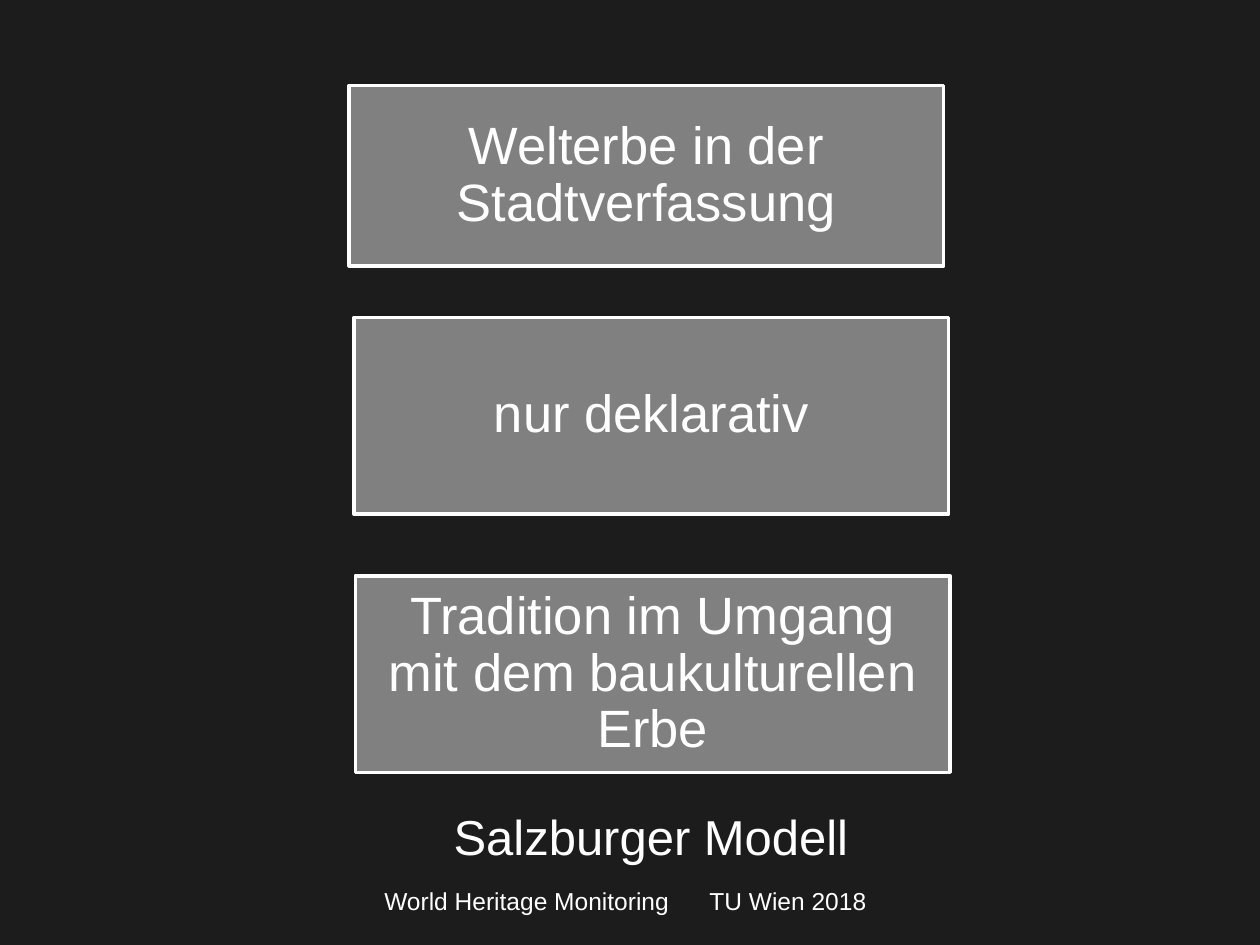
from lxml.etree import SubElement
from pptx import Presentation
from pptx.dml.color import RGBColor
from pptx.enum.shapes import MSO_SHAPE as Shape
from pptx.enum.text import MSO_ANCHOR as Anchor, MSO_AUTO_SIZE as AutoSize, PP_ALIGN as Align
from pptx.oxml.ns import qn
from pptx.util import Inches, Pt

WIDTH, HEIGHT = 10, 7.5
BACKGROUND, BOX_FILL, WHITE = "1C1C1C", "808080", "FFFFFF"
BOX_WIDTH = 4.72

# Statement, left, top, height
STATEMENTS = [
    ("Welterbe in der Stadtverfassung", 2.77, 0.68, 1.43),
    ("nur deklarativ", 2.81, 2.52, 1.56),
    ("Tradition im Umgang mit dem baukulturellen Erbe", 2.82, 4.57, 1.56),
]


def paint(color_format, color):
    color_format.rgb = RGBColor.from_string(color)


def fill(target, color):
    target.solid()
    paint(target.fore_color, color)


def to_inches(box):
    return [Inches(length) for length in box]


def add_run(paragraph, text, size):
    run = paragraph.add_run()
    run.text = text
    run.font.name = "Arial"
    run.font.size = Pt(size)
    paint(run.font.color, WHITE)


def add_statement(slide, box, text):
    shape = slide.shapes.add_shape(Shape.RECTANGLE, *to_inches(box))
    shape.shadow.inherit = False
    fill(shape.fill, BOX_FILL)
    fill(shape.line.fill, WHITE)
    shape.line.width = Pt(2)
    frame = shape.text_frame
    frame.word_wrap = True
    frame.vertical_anchor = Anchor.MIDDLE
    frame.margin_left = frame.margin_right = Inches(0.12)
    frame.margin_top = frame.margin_bottom = Inches(0.12)
    paragraph = frame.paragraphs[0]
    paragraph.alignment = Align.CENTER
    paragraph.line_spacing = 0.9
    add_run(paragraph, text, 30)


def place_title(slide, box, text):
    title = slide.shapes.title
    title.left, title.top, title.width, title.height = to_inches(box)
    frame = title.text_frame
    frame.word_wrap = True
    frame.auto_size = AutoSize.NONE
    frame.vertical_anchor = Anchor.TOP
    paragraph = frame.paragraphs[0]
    paragraph.alignment = Align.LEFT
    add_run(paragraph, text, 28)


def add_footer(slide, box, event, venue):
    frame = slide.shapes.add_textbox(*to_inches(box)).text_frame
    frame.word_wrap = True
    frame.margin_left = Inches(1.99)
    paragraph = frame.paragraphs[0]
    paragraph.alignment = Align.LEFT
    # A tab stop separates event and venue
    tabs = SubElement(paragraph._p.get_or_add_pPr(), qn("a:tabLst"))
    SubElement(tabs, qn("a:tab"), pos=str(Inches(2.58)), algn="l")
    add_run(paragraph, event + "\t", 14)
    add_run(paragraph, venue, 14)


def main():
    presentation = Presentation()
    presentation.slide_width, presentation.slide_height = Inches(WIDTH), Inches(HEIGHT)
    slide = presentation.slides.add_slide(presentation.slide_layouts[5])
    fill(slide.background.fill, BACKGROUND)

    for text, left, top, height in STATEMENTS:
        add_statement(slide, (left, top, BOX_WIDTH, height), text)
    place_title(slide, (3.5, 6.35, 3.46, 0.57), "Salzburger Modell")
    add_footer(slide, (1.06, 6.98, 7.8, 0.24), "World Heritage Monitoring", "TU Wien 2018")

    presentation.save("out.pptx")


if __name__ == "__main__":
    main()
